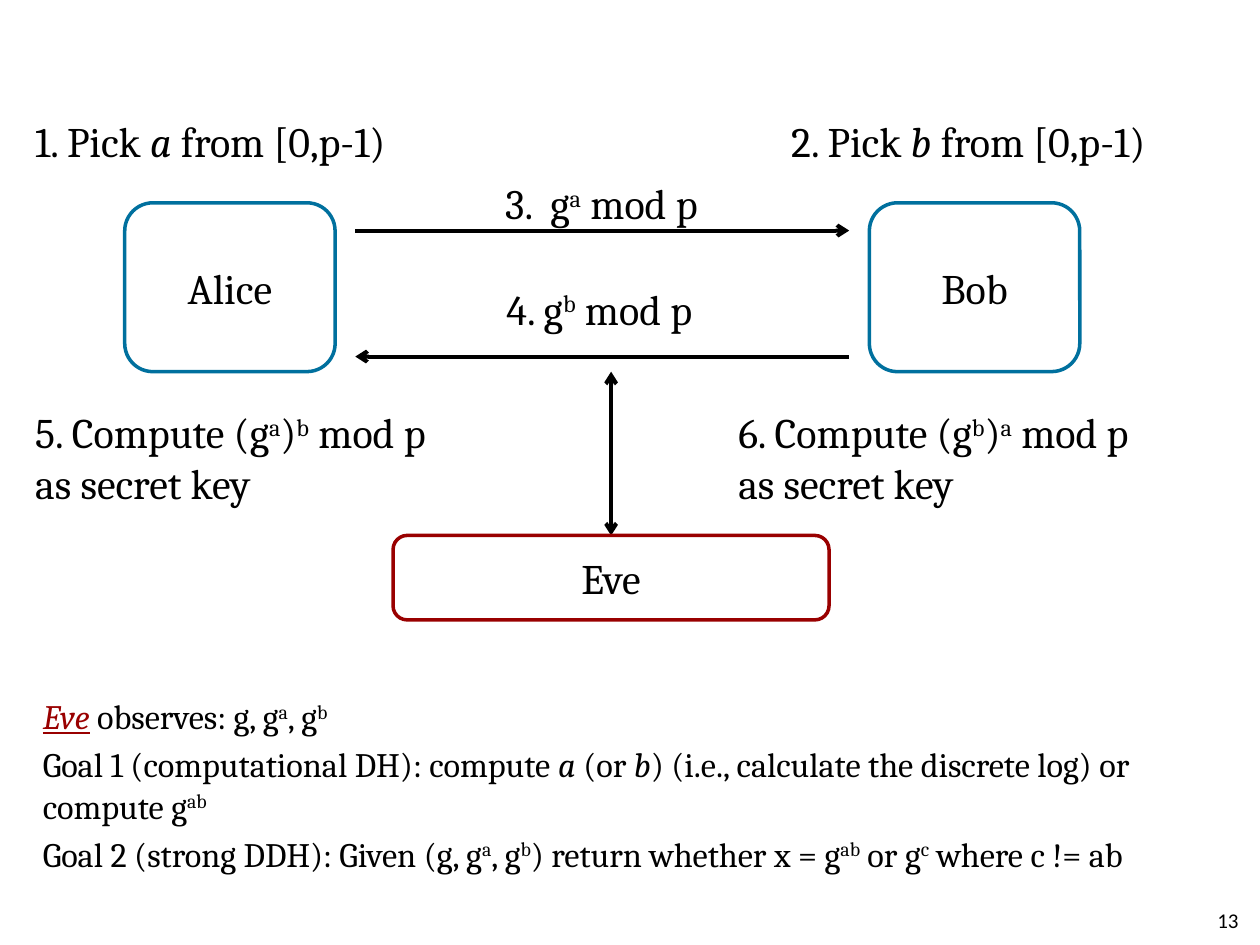
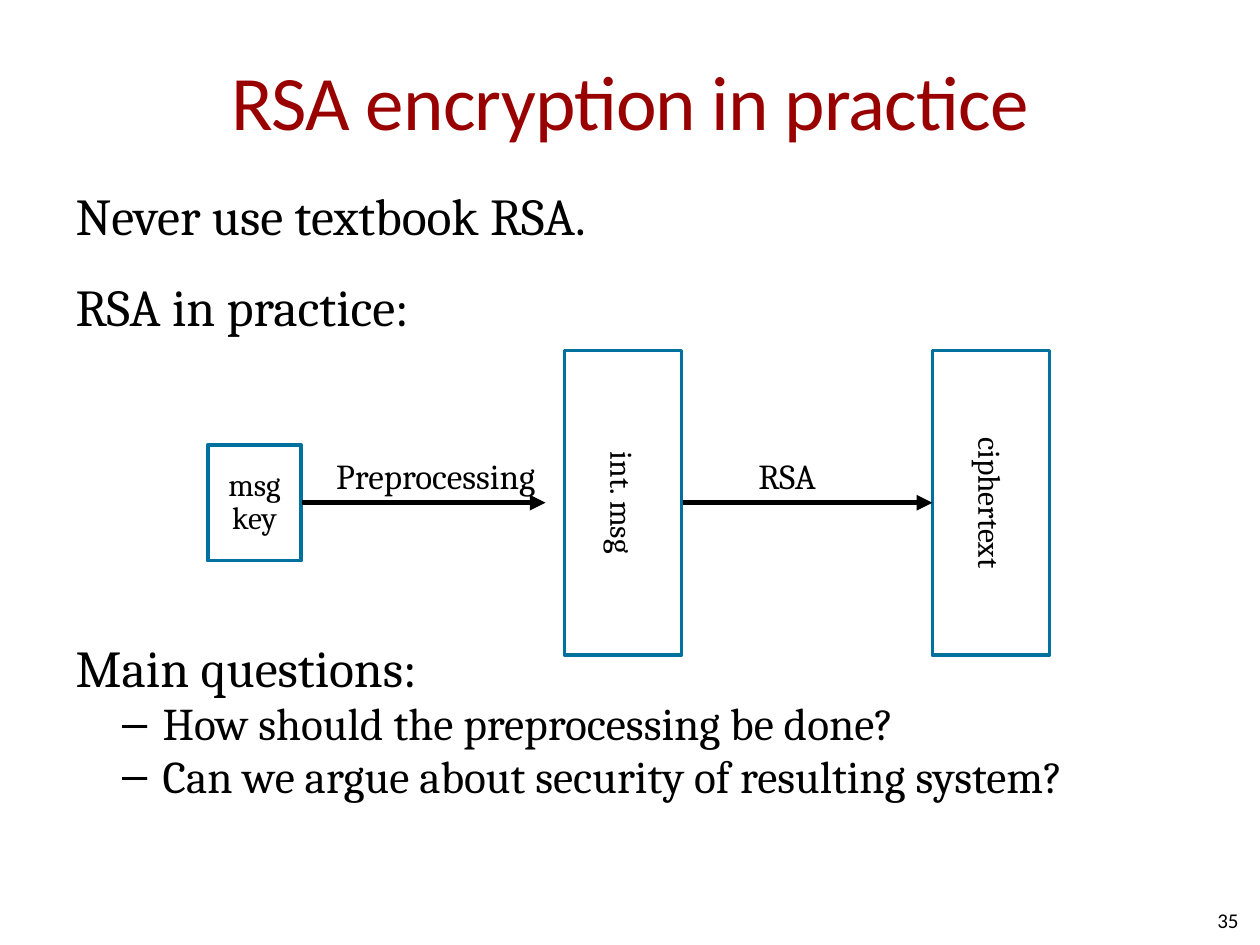
"""Build two slides: a key exchange under observation, and RSA encryption in practice."""
from dataclasses import dataclass

from lxml import etree
from pptx import Presentation
from pptx.dml.color import RGBColor
from pptx.enum.shapes import MSO_CONNECTOR, MSO_SHAPE
from pptx.enum.text import MSO_ANCHOR, MSO_AUTO_SIZE, PP_ALIGN
from pptx.oxml.ns import qn
from pptx.util import Inches, Pt

LEFT, CENTER, RIGHT = PP_ALIGN.LEFT, PP_ALIGN.CENTER, PP_ALIGN.RIGHT
MIDDLE = MSO_ANCHOR.MIDDLE
FIXED, GROW = MSO_AUTO_SIZE.NONE, MSO_AUTO_SIZE.SHAPE_TO_FIT_TEXT
RECT, ROUNDED = MSO_SHAPE.RECTANGLE, MSO_SHAPE.ROUNDED_RECTANGLE
STRAIGHT = MSO_CONNECTOR.STRAIGHT


@dataclass(frozen=True)
class Theme:
    """Colours, fonts and type sizes shared by the slides."""
    ink: RGBColor = RGBColor(0, 0, 0)
    paper: RGBColor = RGBColor(255, 255, 255)
    blue: RGBColor = RGBColor(0x00, 0x70, 0x9E)
    red: RGBColor = RGBColor(0x99, 0x00, 0x00)
    heading_font: str = "Calibri"
    text_font: str = "Cambria"
    title: float = 44
    body: float = 29.6
    question: float = 25.9
    diagram: float = 24
    note: float = 19.6
    label: float = 20
    block: float = 18
    number: float = 12


THEME = Theme()

# In the text, *x* is italic and ^x^ is superscript.
NOTES = [
    "*Eve* observes: g, g^a^, g^b^",
    "Goal 1 (computational DH): compute *a* (or *b*) (i.e., calculate the discrete log) or compute g^ab^",
    "Goal 2 (strong DDH): Given (g, g^a^, g^b^) return whether x = g^ab^ or g^c^ where c != ab",
]
STEPS = [
    ("1. Pick *a* from [0,p-1)", 0.28, 0.92, 3.03, 0.4),
    ("2. Pick *b* from [0,p-1)", 6.28, 0.92, 3.03, 0.4),
    ("3.  g^a^ mod p", 4.01, 1.41, 1.66, 0.4),
    ("4. g^b^ mod p", 4.02, 2.25, 1.6, 0.4),
    ("5. Compute (g^a^)^b^ mod p\nas secret key", 0.28, 3.23, 3.34, 0.81),
    ("6. Compute (g^b^)^a^ mod p\nas secret key", 5.86, 3.23, 3.34, 0.81),
]
PARTIES = [
    ("Alice", (0.99, 1.61, 1.67, 1.34), THEME.blue),
    ("Bob", (6.9, 1.61, 1.67, 1.34), THEME.blue),
    ("Eve", (3.12, 4.25, 3.46, 0.67), THEME.red),
]
MESSAGES = [
    ((2.82, 1.83), (6.74, 1.83), {"tail": "arrow"}),
    ((2.82, 2.83), (6.74, 2.83), {"head": "arrow"}),
    ((4.85, 2.95), (4.85, 4.25), {"head": "arrow", "tail": "arrow"}),
]
TITLE = "RSA encryption in practice"
STATEMENTS = [
    ("Never use textbook RSA.", 6),
    ("RSA in practice:", 24),
    ("Main questions:", 177.5),
]
QUESTIONS = [
    "How should the preprocessing be done?",
    "Can we argue about security of resulting system?",
]
PIPELINE_MIDDLE = 3.99
BLOCKS = [
    (["msg", "key"], 1.65, 0.74, 0.92, False),
    (["int. msg"], 4.48, 0.93, 2.42, True),
    (["ciphertext"], 7.4, 0.93, 2.42, True),
]
STAGES = [
    ("Preprocessing", 2.57, 1.91, 2.4, 4.33),
    ("RSA", 5.92, 0.69, 5.42, 7.4),
]


def inches(values):
    """Turn numbers into lengths."""
    return [Inches(value) for value in values]


def add_spans(para, markup):
    """Write marked-up text as runs and line breaks."""
    for row, line in enumerate(markup.split("\n")):
        if row:
            para.add_line_break()
        for raised, outer in enumerate(line.split("^")):
            for slanted, words in enumerate(outer.split("*")):
                if words:
                    span = para.add_run()
                    span.text = words
                    if slanted % 2:
                        span.font.italic = True
                    if raised % 2:
                        span._r.get_or_add_rPr().set("baseline", "30000")


def write(frame, lines, size, align=LEFT, font=THEME.text_font, color=THEME.ink):
    """Fill a text frame with one paragraph a line and return the paragraphs."""
    for index, line in enumerate(lines):
        para = frame.add_paragraph() if index else frame.paragraphs[0]
        add_spans(para, line)
        para.alignment = align
        para.font.size, para.font.name = Pt(size), font
        para.font.color.rgb = color
    return frame.paragraphs


def clear_insets(frame):
    """Remove the space between a frame and its text."""
    frame.margin_left = frame.margin_top = frame.margin_right = frame.margin_bottom = 0


def place(holder, left, top, width, height):
    """Move a placeholder and return its fixed-size text frame."""
    holder.left, holder.top, holder.width, holder.height = inches((left, top, width, height))
    holder.text_frame.auto_size = FIXED
    return holder.text_frame


def set_bullet(para, mark=None, left=0, hang=0):
    """Give a paragraph a bullet and a hanging indent, or neither."""
    props = para._p.get_or_add_pPr()
    props.set("marL", str(Inches(left)))
    props.set("indent", str(-Inches(hang)))
    bullet = etree.Element(qn("a:buChar" if mark else "a:buNone"))
    if mark:
        bullet.set("char", mark)
    props.find(qn("a:defRPr")).addprevious(bullet)


def add_label(page, text, area, size, flush=False):
    """Add a line of text that does not wrap."""
    frame = page.shapes.add_textbox(*inches(area)).text_frame
    frame.word_wrap, frame.auto_size = False, GROW
    if flush:
        clear_insets(frame)
    write(frame, [text], size)


def add_box(page, kind, lines, area, size, color):
    """Add an outlined white box with centred text."""
    box = page.shapes.add_shape(kind, *inches(area))
    box.shadow.inherit = False
    box.fill.solid()
    box.fill.fore_color.rgb = THEME.paper
    box.line.color.rgb, box.line.width = color, Pt(2)
    box.text_frame.vertical_anchor = MIDDLE
    write(box.text_frame, lines, size, CENTER)
    return box.text_frame


def add_arrow(page, start, end, width, ends):
    """Add a straight line with arrowheads at the named ends."""
    arrow = page.shapes.add_connector(STRAIGHT, *inches(start + end))
    arrow.line.color.rgb, arrow.line.width = THEME.ink, Pt(width)
    props = arrow._element.spPr
    for end_name, style in ends.items():
        etree.SubElement(props.get_or_add_ln(), qn(f"a:{end_name}End"), type=style)
    etree.SubElement(props, qn("a:effectLst"))


def add_page(deck, number):
    """Add a title and content page with its number."""
    page = deck.slides.add_slide(deck.slide_layouts[1])
    frame = page.shapes.add_textbox(*inches((7.5, 7.1, 2.33, 0.4))).text_frame
    frame.word_wrap, frame.vertical_anchor = True, MIDDLE
    clear_insets(frame)
    write(frame, [number], THEME.number, RIGHT, THEME.heading_font)
    return page


def build_exchange(deck):
    """Build the key exchange between Alice and Bob with Eve listening."""
    page = add_page(deck, "13")
    title = page.shapes.title._element
    title.getparent().remove(title)
    notes = write(place(page.placeholders[1], 0.24, 5.47, 9.51, 1.62), NOTES, THEME.note)
    for para in notes:
        para.space_before = Pt(4)
        set_bullet(para)
    eve = notes[0].runs[0].font
    eve.underline, eve.color.rgb = True, THEME.red
    for start, end, ends in MESSAGES:
        add_arrow(page, start, end, 2.25, ends)
    for text, *area in STEPS:
        add_label(page, text, area, THEME.diagram, flush=True)
    for name, area, color in PARTIES:
        clear_insets(add_box(page, ROUNDED, [name], area, THEME.diagram, color))


def build_practice(deck):
    """Build the RSA pipeline with its statements and questions."""
    page = add_page(deck, "35")
    frame = place(page.shapes.title, 0.5, 0.17, 9, 1.25)
    frame.margin_left = frame.margin_right = 0
    frame.vertical_anchor = MIDDLE
    heading = write(frame, [TITLE], THEME.title, CENTER, THEME.heading_font, THEME.red)[0]
    heading.runs[0]._r.get_or_add_rPr().set("spc", "-50")

    body = place(page.placeholders[1], 0.5, 1.5, 9, 5.2)
    lines = [text for text, _ in STATEMENTS] + QUESTIONS
    gaps = [gap for _, gap in STATEMENTS] + [5.2] * len(QUESTIONS)
    for index, (para, gap) in enumerate(zip(write(body, lines, THEME.body), gaps)):
        para.line_spacing, para.space_before = 0.8, Pt(gap)
        if index < len(STATEMENTS):
            set_bullet(para)
        else:
            para.level = 1
            para.font.size = Pt(THEME.question)
            set_bullet(para, "–", 0.69, 0.32)

    for lines, left, width, height, upright in BLOCKS:
        area = (left, PIPELINE_MIDDLE - height / 2, width, height)
        frame = add_box(page, RECT, lines, area, THEME.block, THEME.blue)
        frame.word_wrap = False
        if upright:
            frame._txBody.bodyPr.set("vert", "vert")
        else:
            for para in frame.paragraphs:
                para.line_spacing = Pt(18.6)
    for text, left, width, start, end in STAGES:
        add_arrow(page, (start, PIPELINE_MIDDLE), (end, PIPELINE_MIDDLE), 3, {"tail": "triangle"})
        add_label(page, text, (left, 3.56, width, 0.44), THEME.label)


def main():
    """Build and save the deck."""
    deck = Presentation()
    deck.slide_width, deck.slide_height = inches((10, 7.5))
    build_exchange(deck)
    build_practice(deck)
    deck.save("out.pptx")


if __name__ == "__main__":
    main()
